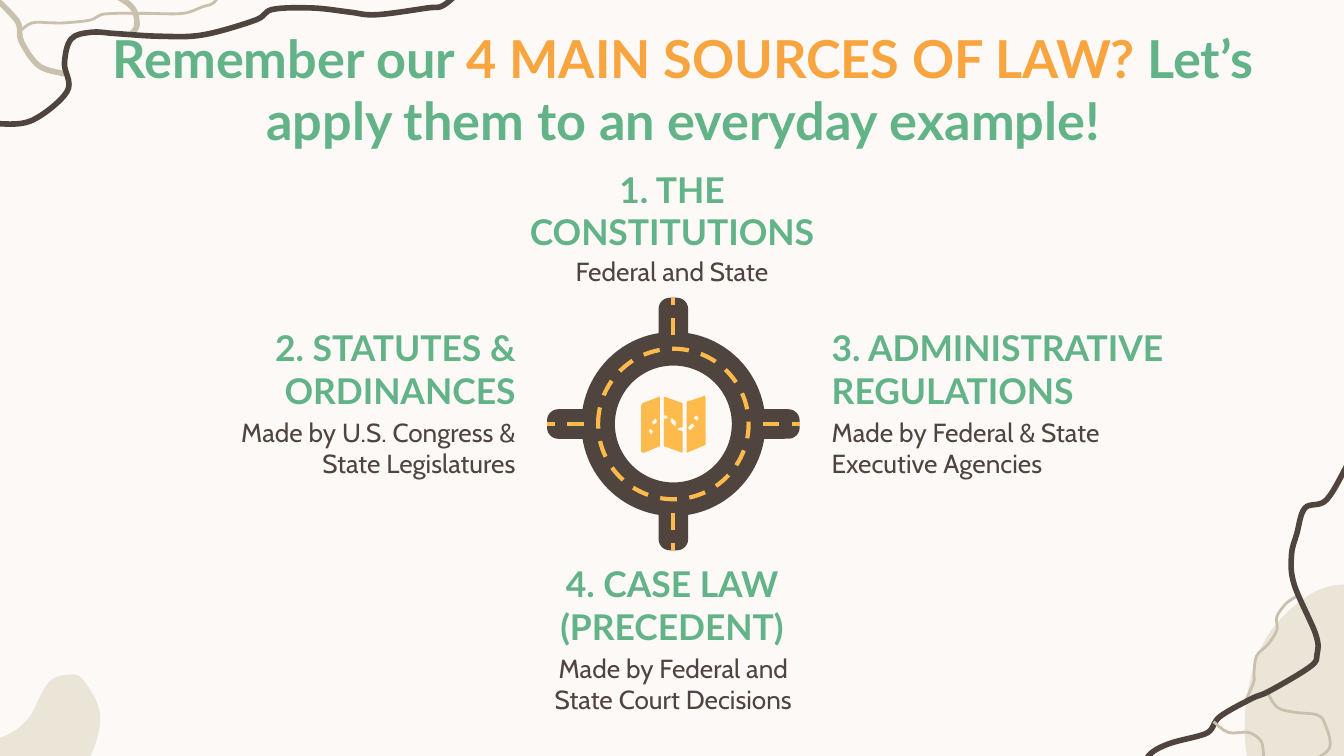
from lxml.etree import SubElement
from pptx import Presentation
from pptx.dml.color import RGBColor as Rgb
from pptx.enum.dml import MSO_LINE as Dash
from pptx.enum.shapes import MSO_CONNECTOR as Wire, MSO_SHAPE as Kind
from pptx.enum.text import MSO_ANCHOR as Anchor, MSO_AUTO_SIZE as Auto, PP_ALIGN as Align
from pptx.oxml.ns import qn
from pptx.util import Pt

PX = 4572
COLORS = {"paper": "FCF9F7", "sand": "EBE5D8", "tan": "C9C0AD", "road": "50443F",
          "green": "63B389", "orange": "F8A53F", "gold": "FFBA4C"}
HEAD = {"name": "Lato", "size": Pt(19), "bold": True}
BODY = {"name": "Cabin", "size": Pt(14), "bold": False}
TITLE = {**HEAD, "size": Pt(28)}

SOURCES = [
    ("4. CASE LAW (PRECEDENT)", (768, 867, 464, 116),
     "Made by Federal and State Court Decisions", (770, 951, 464, 148), Align.CENTER),
    ("1. THE CONSTITUTIONS", (768, 228, 464, 168),
     "Federal and State", (779, 360, 442, 86), Align.CENTER),
    ("3. ADMINISTRATIVE REGULATIONS", (1218, 516, 716, 116),
     "Made by Federal & State Executive Agencies", (1218, 599, 464, 148), Align.LEFT),
    ("2. STATUTES & ORDINANCES", (168, 516, 619, 116),
     "Made by U.S. Congress & State Legislatures", (323, 599, 464, 148), Align.RIGHT),
]

TOP_WIRES = [
    ("tan", 3, [(196, 50), (204, 36), (194, 8), (146, -20)]),
    ("tan", 3, [(96, 110), (58, 98), (32, 62), (28, 36), (14, 18), (-6, -2)]),
    ("road", 3, [(-10, 184), (46, 180), (100, 136), (96, 94), (106, 58), (136, 48),
                 (172, 50), (238, 54), (302, 52), (380, 30), (406, 14), (466, 12),
                 (520, 18), (560, 22), (636, 12), (660, 8), (690, -18)]),
    ("tan", 1.5, [(30, 46), (48, 34), (76, 34), (96, 34), (134, 30), (150, 22), (172, 20),
                  (204, 20), (222, 20), (272, 20), (302, 10), (318, 4), (334, -18)]),
]
LOW_WIRES = [
    ("tan", 1.5, [(184, 346), (200, 372), (226, 380), (260, 384), (272, 398), (278, 434),
                  (242, 458)]),
    ("tan", 1.5, [(232, 206), (214, 218), (200, 238), (200, 258), (186, 280), (170, 296),
                  (166, 322), (166, 334), (154, 362)]),
    ("road", 3, [(306, 10), (274, 64), (242, 76), (230, 114), (222, 146), (226, 190),
                 (258, 264), (260, 294), (250, 312), (190, 348), (162, 360), (116, 386),
                 (102, 406), (88, 414), (42, 426), (14, 440), (0, 460)]),
    ("tan", 1.5, [(106, 394), (128, 410), (158, 410), (176, 422), (180, 438), (180, 458)]),
]
LOW_BLOB = [(376, 220), (318, 191), (254, 202), (187, 265), (156, 354), (156, 449),
            (186, 530), (324, 610), (466, 580), (520, 450), (446, 402), (406, 274)]
LEFT_BLOB = [(0, 148), (40, 122), (72, 66), (102, 54), (124, 62), (149, 114), (132, 180),
             (80, 244), (-10, 268), (-138, 224), (-184, 148), (-184, 78), (-120, 28),
             (-74, 46), (-42, 94), (-22, 140)]
PANELS = [
    [[(28, 2), (2, 12), (0, 16), (0, 84), (4, 86), (28, 76)],
     [(22, 34), (24, 40), (22, 42), (18, 44), (16, 40), (20, 36)],
     [(14, 50), (18, 54), (16, 58), (14, 58), (12, 54), (12, 52)]],
    [[(34, 2), (34, 30), (38, 30), (40, 33), (36, 36), (34, 34), (34, 76), (62, 86),
      (62, 54), (56, 52), (54, 50), (58, 48), (62, 48), (62, 12)],
     [(46, 34), (48, 36), (52, 40), (52, 46), (50, 46), (46, 42), (44, 40), (44, 36)]],
    [[(94, 0), (92, 2), (68, 10), (68, 86), (96, 74), (96, 4)],
     [(82, 30), (86, 34), (84, 38), (82, 38), (78, 34), (80, 32)],
     [(76, 42), (80, 46), (74, 52), (72, 52), (70, 48), (74, 44)]],
]


def emu(*vals):
    """Turn px lengths into EMU."""
    return [round(v * PX) for v in vals]


def rgb(key):
    """Look up a colour."""
    return Rgb.from_string(COLORS[key])


def paint(shape, fill=None, line=None, width=0, dash=None):
    """Set fill and line of a shape and drop its shadow."""
    shape.shadow.inherit = False
    for part, key in ((shape.fill, fill), (shape.line.fill, line)):
        if key:
            part.solid()
            part.fore_color.rgb = rgb(key)
        else:
            part.background()
    if line:
        shape.line.width, shape.line.dash_style = Pt(width), dash


def bend(shape, closed):
    """Turn the straight segments of a one-loop outline into smooth curves."""
    tree = shape._element
    pts = [(int(p.get("x")), int(p.get("y"))) for p in tree.iter(qn("a:pt"))]
    ring = [pts[-2], *pts, pts[1]] if closed else [pts[0], *pts, pts[-1]]
    for seg, a, b, c, d in zip(list(tree.iter(qn("a:lnTo"))), ring, ring[1:], ring[2:], ring[3:]):
        curve = seg.getparent().makeelement(qn("a:cubicBezTo"))
        near = [q + (r - p) / 6 for p, q, r in zip(a, b, c)]
        far = [q - (r - p) / 6 for p, q, r in zip(b, c, d)]
        for x, y in (near, far, c):
            SubElement(curve, qn("a:pt"), x=str(round(x)), y=str(round(y)))
        seg.getparent().replace(seg, curve)


def draw(slide, box, loops, closed=True, curved=False, **look):
    """Draw one outline of one or more loops inside a box."""
    loops = [[emu(box[0] + x, box[1] + y) for x, y in loop] for loop in loops]
    pen = slide.shapes.build_freeform(*loops[0][0], scale=1.0)
    for i, loop in enumerate(loops):
        if i:
            pen.move_to(*loop[0])
        pen.add_line_segments(loop[1:] + loop[:1] * (closed and curved), close=closed)
    shape = pen.convert_to_shape()
    if curved:
        bend(shape, closed)
    paint(shape, **look)


def corner(slide, box, blob=None, wires=()):
    """Decorate a corner with a blob and loose wires."""
    if blob:
        draw(slide, box, [blob], curved=True, fill="sand")
    for key, width, pts in wires:
        draw(slide, box, [pts], closed=False, curved=True, line=key, width=width)


def write(slide, box, runs, font, align, anchor):
    """Place one paragraph of coloured runs."""
    frame = slide.shapes.add_textbox(*emu(*box)).text_frame
    look = {"word_wrap": True, "auto_size": Auto.NONE, "vertical_anchor": anchor}
    look.update({f"margin_{side}": 20 * PX for side in ("left", "right", "top", "bottom")})
    for name, val in look.items():
        setattr(frame, name, val)
    para = frame.paragraphs[0]
    para.alignment = align
    for text, key in runs:
        run = para.add_run()
        run.text = text
        for name, val in font.items():
            setattr(run.font, name, val)
        run.font.color.rgb = rgb(key)


def source(slide, head, top, body, low, align):
    """Place the heading and note of one source of law."""
    write(slide, top, [(head, "green")], HEAD, align, Anchor.BOTTOM)
    write(slide, low, [(body, "road")], BODY, align, Anchor.TOP)


def circle(slide, x, y, r, **look):
    """Draw a circle around a centre."""
    paint(slide.shapes.add_shape(Kind.OVAL, *emu(x - r, y - r, 2 * r, 2 * r)), **look)


def hub(slide, box):
    """Draw the roundabout with four arms."""
    x, y = box[0] + box[2] // 2, box[1] + box[3] // 2
    lane = {"line": "gold", "width": 2.25, "dash": Dash.DASH}
    circle(slide, x, y, 112, fill="paper", line="road", width=18)
    for dx, dy in ((0, 1), (0, -1), (-1, 0), (1, 0)):
        place = emu(x + 150 * dx - 38, y + 150 * dy - 22, 76, 44)
        arm = slide.shapes.add_shape(Kind.ROUNDED_RECTANGLE, *place)
        arm.adjustments[0] = 0.38
        arm.rotation = 270 if dy else 0
        paint(arm, fill="road")
        ends = emu(x + 133 * dx, y + 133 * dy, x + 188 * dx, y + 188 * dy)
        mark = slide.shapes.add_connector(Wire.STRAIGHT, *ends)
        mark.line.color.rgb = rgb(lane["line"])
        mark.line.width, mark.line.dash_style = Pt(lane["width"]), lane["dash"]
        SubElement(mark._element.spPr, qn("a:effectLst"))
    circle(slide, x, y, 112, **lane)


def chart(slide, box):
    """Draw the folded map."""
    for loops in PANELS:
        draw(slide, box, loops, fill="gold")


def main():
    """Build the slide."""
    deck = Presentation()
    deck.slide_width, deck.slide_height = emu(2000, 1125)
    slide = deck.slides.add_slide(deck.slide_layouts[6])
    slide.background.fill.solid()
    slide.background.fill.fore_color.rgb = rgb("paper")
    corner(slide, (1700, 680), LOW_BLOB, LOW_WIRES)
    corner(slide, (0, 0), wires=TOP_WIRES)
    corner(slide, (0, 950), LEFT_BLOB)
    title = [("Remember our ", "green"), ("4 MAIN SOURCES OF LAW? ", "orange"),
             ("Let’s apply them to an everyday example!", "green")]
    write(slide, (100, 18, 1833, 228), title, TITLE, Align.CENTER, Anchor.MIDDLE)
    hub(slide, (814, 443, 376, 376))
    for item in SOURCES:
        source(slide, *item)
    chart(slide, (954, 588))
    deck.save("out.pptx")


if __name__ == "__main__":
    main()
